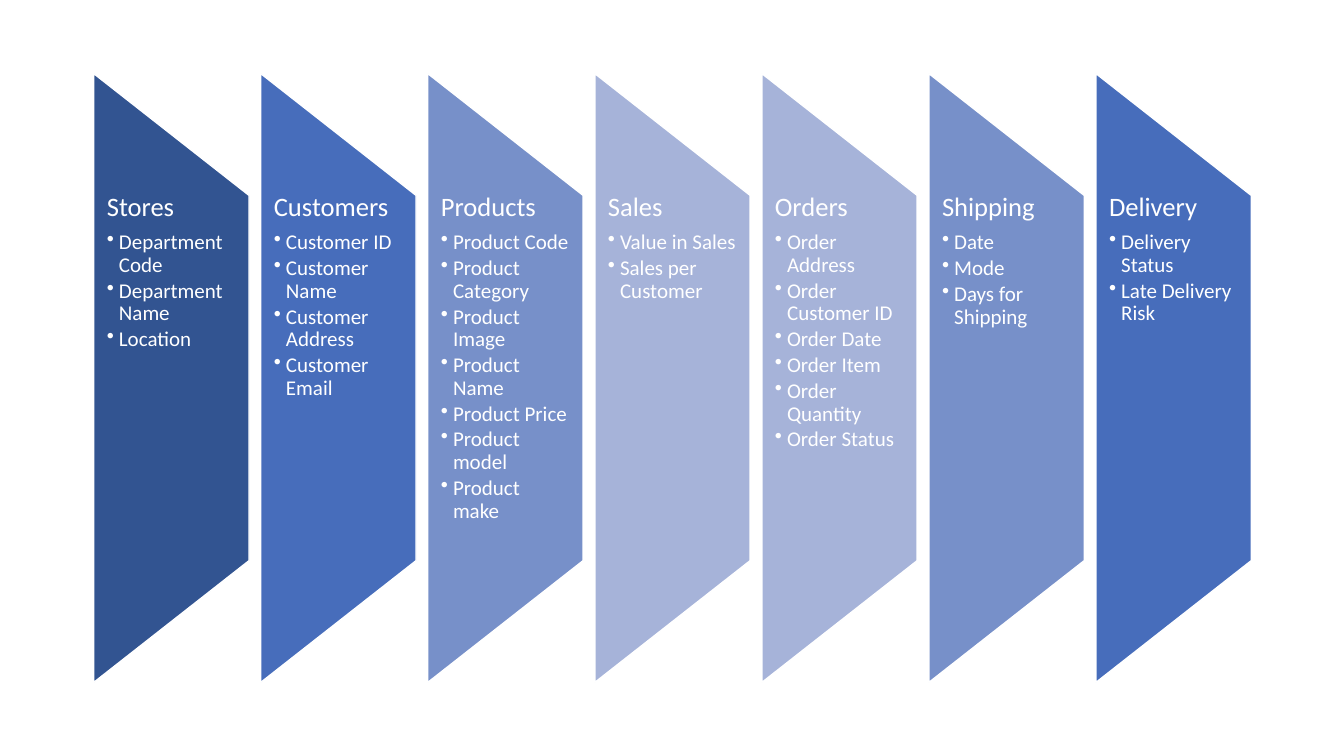
from lxml.etree import SubElement
from pptx import Presentation
from pptx.dml.color import RGBColor
from pptx.enum.shapes import MSO_SHAPE
from pptx.enum.text import MSO_ANCHOR, PP_ALIGN
from pptx.oxml.ns import qn
from pptx.util import Inches, Pt

WHITE = RGBColor(0xFF, 0xFF, 0xFF)
NAVY = RGBColor(0x32, 0x54, 0x91)
BLUE = RGBColor(0x47, 0x6D, 0xBB)
SOFT_BLUE = RGBColor(0x77, 0x90, 0xC9)
PALE_BLUE = RGBColor(0xA6, 0xB3, 0xD9)

FONT = "Calibri"
FIRST_LEFT, LAST_LEFT = 0.93, 10.87
PANEL_TOP, PANEL_WIDTH, PANEL_HEIGHT = 0.73, 1.54, 6.04
TEXT_TOP, TEXT_HEIGHT = 1.92, 3.63
SIDE_INSET = 0.13
BULLET_INDENT = 0.12

ENTITIES = [
    ("Stores", NAVY, ["Department Code", "Department Name", "Location"]),
    ("Customers", BLUE, ["Customer ID", "Customer Name", "Customer Address", "Customer Email"]),
    ("Products", SOFT_BLUE, ["Product Code", "Product Category", "Product Image", "Product Name",
                             "Product Price", "Product model", "Product make"]),
    ("Sales", PALE_BLUE, ["Value in Sales", "Sales per Customer"]),
    ("Orders", PALE_BLUE, ["Order Address", "Order Customer ID", "Order Date", "Order Item",
                           "Order Quantity", "Order Status"]),
    ("Shipping", SOFT_BLUE, ["Date", "Mode", "Days for Shipping"]),
    ("Delivery", BLUE, ["Delivery Status", "Late Delivery Risk"]),
]


def add_panel(shapes, left, color):
    center_x = left + PANEL_WIDTH / 2
    center_y = PANEL_TOP + PANEL_HEIGHT / 2
    panel = shapes.add_shape(
        MSO_SHAPE.FLOWCHART_MANUAL_OPERATION,
        Inches(center_x - PANEL_HEIGHT / 2), Inches(center_y - PANEL_WIDTH / 2),
        Inches(PANEL_HEIGHT), Inches(PANEL_WIDTH))
    panel.rotation = 270
    panel.shadow.inherit = False
    panel.fill.solid()
    panel.fill.fore_color.rgb = color
    panel.line.color.rgb = WHITE
    panel.line.width = Pt(1)


def add_bullet(para):
    properties = para._p.get_or_add_pPr()
    properties.set("marL", str(Inches(BULLET_INDENT)))
    properties.set("indent", str(-Inches(BULLET_INDENT)))
    SubElement(properties, qn("a:buChar")).set("char", "•")


def write_paragraph(para, text, size, space_ratio, bullet=False):
    if bullet:
        para.level = 1
        add_bullet(para)
    para.alignment = PP_ALIGN.LEFT
    para.line_spacing = 0.9
    para.space_before = Pt(0)
    para.space_after = Pt(size * space_ratio)
    span = para.add_run()
    span.text = text
    span.font.name = FONT
    span.font.size = Pt(size)
    span.font.color.rgb = WHITE


def add_entity_text(shapes, left, heading, fields):
    box = shapes.add_textbox(Inches(left), Inches(TEXT_TOP),
                             Inches(PANEL_WIDTH), Inches(TEXT_HEIGHT))
    frame = box.text_frame
    frame.word_wrap = True
    frame.vertical_anchor = MSO_ANCHOR.TOP
    frame.margin_left = frame.margin_right = Inches(SIDE_INSET)
    frame.margin_top = frame.margin_bottom = 0
    write_paragraph(frame.paragraphs[0], heading, size=19, space_ratio=0.35)
    for field in fields:
        write_paragraph(frame.add_paragraph(), field, size=15, space_ratio=0.15, bullet=True)


def main():
    deck = Presentation()
    deck.slide_width, deck.slide_height = Inches(13.33), Inches(7.5)
    page = deck.slides.add_slide(deck.slide_layouts[6])
    diagram = page.shapes.add_group_shape()
    pitch = (LAST_LEFT - FIRST_LEFT) / (len(ENTITIES) - 1)
    for index, (heading, color, fields) in enumerate(ENTITIES):
        left = FIRST_LEFT + index * pitch
        add_panel(diagram.shapes, left, color)
        add_entity_text(diagram.shapes, left, heading, fields)
    deck.save("out.pptx")


if __name__ == "__main__":
    main()
